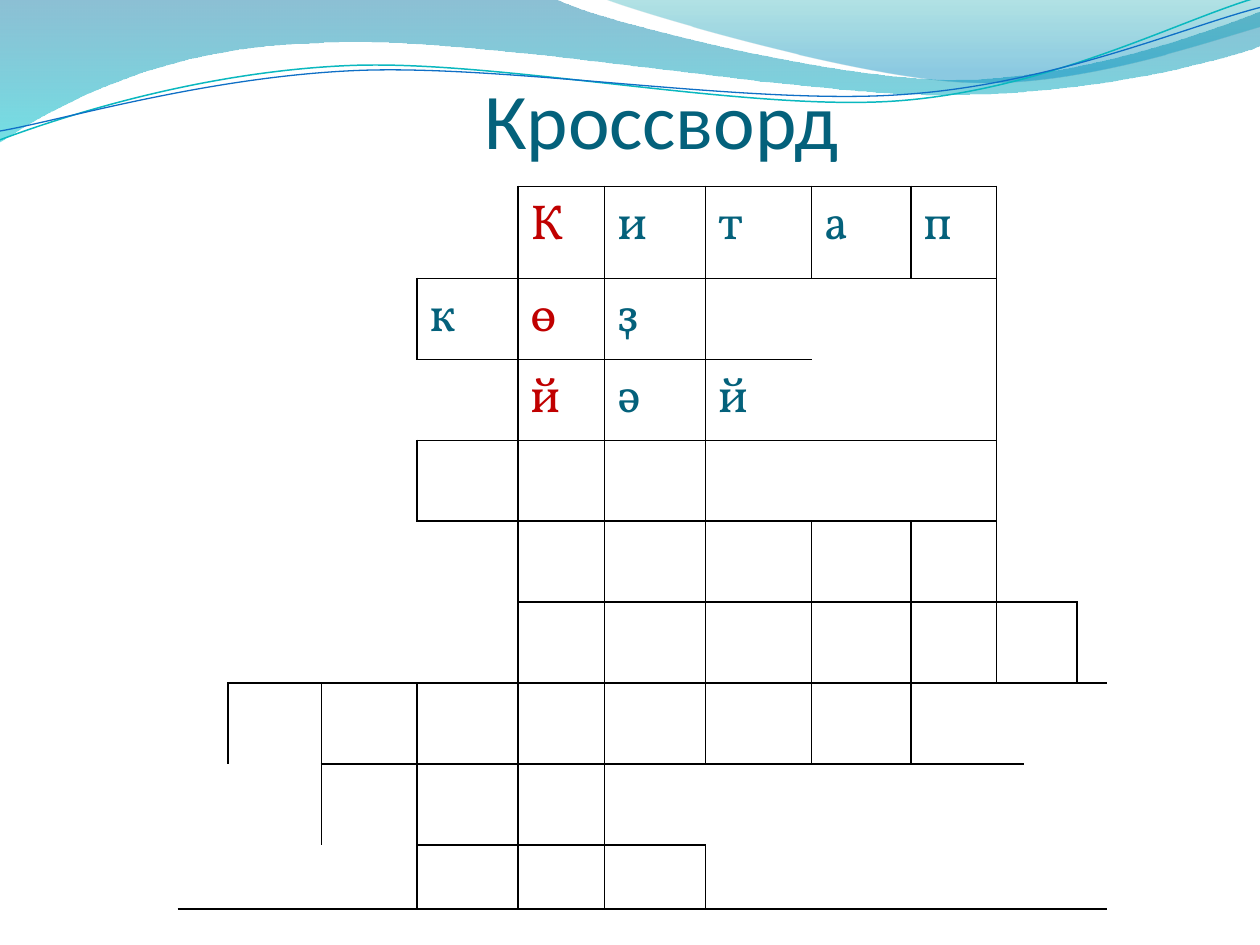
from math import cos, radians, sin

from lxml import etree
from pptx import Presentation
from pptx.dml.color import RGBColor
from pptx.enum.text import MSO_ANCHOR, PP_ALIGN
from pptx.oxml.ns import qn
from pptx.util import Inches, Pt

CENTER = PP_ALIGN.CENTER
BOTTOM = MSO_ANCHOR.BOTTOM

COLORS = {
    "title": "04617B", "letter": "04617B", "key": "C00000", "grid": "000000",
    "deep": "0074A1", "aqua": "00C6CF", "teal": "00A1A9", "sky": "008BBF",
    "teal_line": "0AB8BF", "blue_line": "0F6FC6",
}
TITLE_FONT = "Calibri"
LETTER_FONT = "Vollkorn"
LETTER_SIZE = 28
KEY_COLUMN = 4
LINE_TILT = -2.7

COLUMN_WIDTHS = [0.4, 0.74, 0.76, 0.8, 0.69, 0.8, 0.84, 0.79, 0.68, 0.22, 0.42, 0.23]
ROW_HEIGHTS = [0.73, 0.58, 0.61, 0.57, 0.62, 0.59, 0.52, 0.61, 0.51]
WORDS = {0: (4, "Китап"), 1: (3, "көҙ"), 2: (4, "йәй")}

SPECIAL_CELLS = {
    (0, 0): (1, 4, "R"), (0, 9): (5, 3, "LB"),
    (1, 0): (1, 3, "R"), (1, 6): (1, 1, "LTB"), (1, 7): (2, 2, "T"),
    (2, 0): (1, 2, ""), (2, 2): (2, 1, ""), (2, 3): (1, 1, "RTB"),
    (3, 0): (1, 2, ""), (3, 6): (1, 3, "LTB"),
    (4, 0): (1, 3, ""), (4, 3): (2, 1, "RTB"),
    (5, 0): (1, 3, ""), (5, 9): (1, 2, "LRTB"), (5, 11): (1, 1, "L"),
    (6, 0): (1, 1, "R"), (6, 8): (1, 4, "LT"),
    (7, 0): (1, 2, "R"), (7, 5): (1, 5, "LTB"), (7, 10): (2, 2, "B"),
    (8, 0): (1, 3, "RB"), (8, 6): (1, 4, "LB"),
}

WAVE_BANDS = [
    ([[(0, 0)], [(4.4, -0.01)],
      [(4.76, 0.17), (6.64, 0.63), (7.58, 0.63)],
      [(8.53, 0.63), (9.58, 0.26), (10, 0.09)], [(10.01, 0.36)],
      [(9.83, 0.44), (8.7, 0.76), (7.46, 0.75)],
      [(6.22, 0.75), (3.82, 0.28), (2.57, 0.34)],
      [(1.29, 0.36), (0.46, 0.83), (-0.01, 1.13)], [(0, 0)]],
     [("deep", 0, 45), ("aqua", 1, 55)]),
    ([[(4.79, -0.01)],
      [(5.09, 0.11), (6.82, 0.62), (7.69, 0.65)],
      [(8.56, 0.69), (9.61, 0.32), (10, 0.21)], [(10, 0)], [(4.79, -0.01)]],
     [("teal", 0, 30), ("sky", 0.8, 45)]),
]
WAVE_LINES = [
    ([[(0, 1.11)],
      [(0.48, 0.93), (1.58, 0.57), (2.77, 0.52)],
      [(3.95, 0.47), (5.93, 0.89), (7.13, 0.8)],
      [(8.33, 0.71), (9.38, 0.15), (9.98, -0.02)]], (4.99, 0.58), "teal_line", 0.85),
    ([[(0, 1.04)],
      [(0.47, 0.96), (1.64, 0.61), (2.83, 0.56)],
      [(4.03, 0.51), (5.97, 0.84), (7.17, 0.75)],
      [(8.36, 0.67), (9.41, 0.21), (10, 0.06)]], (5, 0.59), "blue_line", 0.75),
]


def rgb(name):
    return RGBColor.from_string(COLORS[name])


def turn(point, pivot, degrees):
    angle = radians(degrees)
    dx, dy = point[0] - pivot[0], point[1] - pivot[1]
    return (pivot[0] + dx * cos(angle) - dy * sin(angle),
            pivot[1] + dx * sin(angle) + dy * cos(angle))


def add_outline(slide, left, top, segments, close):
    points = [(Inches(left + x), Inches(top + y)) for segment in segments for x, y in segment]
    builder = slide.shapes.build_freeform(*points[0])
    builder.add_line_segments(points[1:], close=close)
    outline = builder.convert_to_shape()
    outline.shadow.inherit = False
    steps = iter(list(outline._element.iter(qn("a:lnTo"))))
    for segment in segments[1:]:
        moves = [next(steps) for _ in segment]
        if len(moves) == 3:
            curve = etree.Element(qn("a:cubicBezTo"))
            moves[0].addprevious(curve)
            for move in moves:
                curve.append(move[0])
                move.getparent().remove(move)
    return outline


def add_waves(slide, left, top):
    for segments, stops in WAVE_BANDS:
        band = add_outline(slide, left, top, segments, True)
        band.line.fill.background()
        band.fill.gradient()
        band.fill.gradient_angle = 270
        for stop, (color, position, _) in zip(band.fill.gradient_stops, stops):
            stop.position = position
            stop.color.rgb = rgb(color)
        for color_xml, (_, _, opacity) in zip(band._element.spPr.iter(qn("a:srgbClr")), stops):
            etree.SubElement(color_xml, qn("a:alpha"), val=str(opacity * 1000))
    for segments, pivot, color, width in WAVE_LINES:
        level = [[turn(point, pivot, -LINE_TILT) for point in segment] for segment in segments]
        wave = add_outline(slide, left, top, level, False)
        wave.rotation = LINE_TILT
        wave.fill.background()
        wave.line.color.rgb = rgb(color)
        wave.line.width = Pt(width)


def add_title(slide, left, top, width, height):
    title = slide.shapes.title
    title.left, title.top, title.width, title.height = map(Inches, (left, top, width, height))
    slide.shapes._spTree.append(title._element)
    frame = title.text_frame
    frame.word_wrap = True
    frame.vertical_anchor = BOTTOM
    frame.margin_left = frame.margin_right = frame.margin_bottom = 0
    frame.margin_top = Inches(0.05)
    paragraph = frame.paragraphs[0]
    paragraph.alignment = CENTER
    run = paragraph.add_run()
    run.text = "Кроссворд"
    run.font.size = Pt(45)
    run.font.name = TITLE_FONT
    run.font.color.rgb = rgb("title")


def rule_cell(cell, sides):
    properties = cell._tc.get_or_add_tcPr()
    for side in "LRTB":
        border = etree.SubElement(properties, qn(f"a:ln{side}"), w=str(Pt(1)))
        if side in sides:
            fill = etree.SubElement(border, qn("a:solidFill"))
            etree.SubElement(fill, qn("a:srgbClr"), val=COLORS["grid"])
        else:
            etree.SubElement(border, qn("a:noFill"))
    cell.fill.background()


def write_letter(cell, letter, color):
    run = cell.text_frame.paragraphs[0].add_run()
    run.text = letter
    run.font.size = Pt(LETTER_SIZE)
    run.font.name = LETTER_FONT
    run.font.color.rgb = rgb(color)


def size_blank(cell):
    paragraph = cell.text_frame.paragraphs[0]._p
    end = etree.SubElement(paragraph, qn("a:endParaRPr"), sz=str(LETTER_SIZE * 100))
    etree.SubElement(end, qn("a:latin"), typeface=LETTER_FONT)


def add_crossword(slide, left, top):
    row_count, column_count = len(ROW_HEIGHTS), len(COLUMN_WIDTHS)
    crossword = slide.shapes.add_table(
        row_count, column_count, Inches(left), Inches(top),
        Inches(sum(COLUMN_WIDTHS)), Inches(sum(ROW_HEIGHTS))).table
    crossword.first_row = crossword.horz_banding = False
    for column, width in zip(crossword.columns, COLUMN_WIDTHS):
        column.width = Inches(width)
    for row, height in zip(crossword.rows, ROW_HEIGHTS):
        row.height = Inches(height)

    ruled = {(r, c): "LRTB" for r in range(row_count) for c in range(column_count)}
    for (row, column), (rows, columns, sides) in SPECIAL_CELLS.items():
        last_row, last_column = row + rows - 1, column + columns - 1
        for r in range(row, last_row + 1):
            for c in range(column, last_column + 1):
                edges = {"L": c == column, "R": c == last_column,
                         "T": r == row, "B": r == last_row}
                ruled[r, c] = [side for side in sides if edges[side]]
        ruled[row, column] = sides
        if rows * columns > 1:
            crossword.cell(row, column).merge(crossword.cell(last_row, last_column))

    letters = {(row, start + i): letter
               for row, (start, word) in WORDS.items() for i, letter in enumerate(word)}
    for (row, column), sides in ruled.items():
        cell = crossword.cell(row, column)
        rule_cell(cell, sides)
        if (row, column) in letters:
            write_letter(cell, letters[row, column], "key" if column == KEY_COLUMN else "letter")
        elif row < row_count - 1:
            size_blank(cell)


def main():
    presentation = Presentation()
    presentation.slide_width, presentation.slide_height = Inches(10), Inches(7.5)
    slide = presentation.slides.add_slide(presentation.slide_layouts[5])
    add_waves(slide, 0, 0)
    add_title(slide, 0.91, 0.77, 8.68, 0.54)
    add_crossword(slide, 1.41, 1.48)
    presentation.save("out.pptx")


if __name__ == "__main__":
    main()
